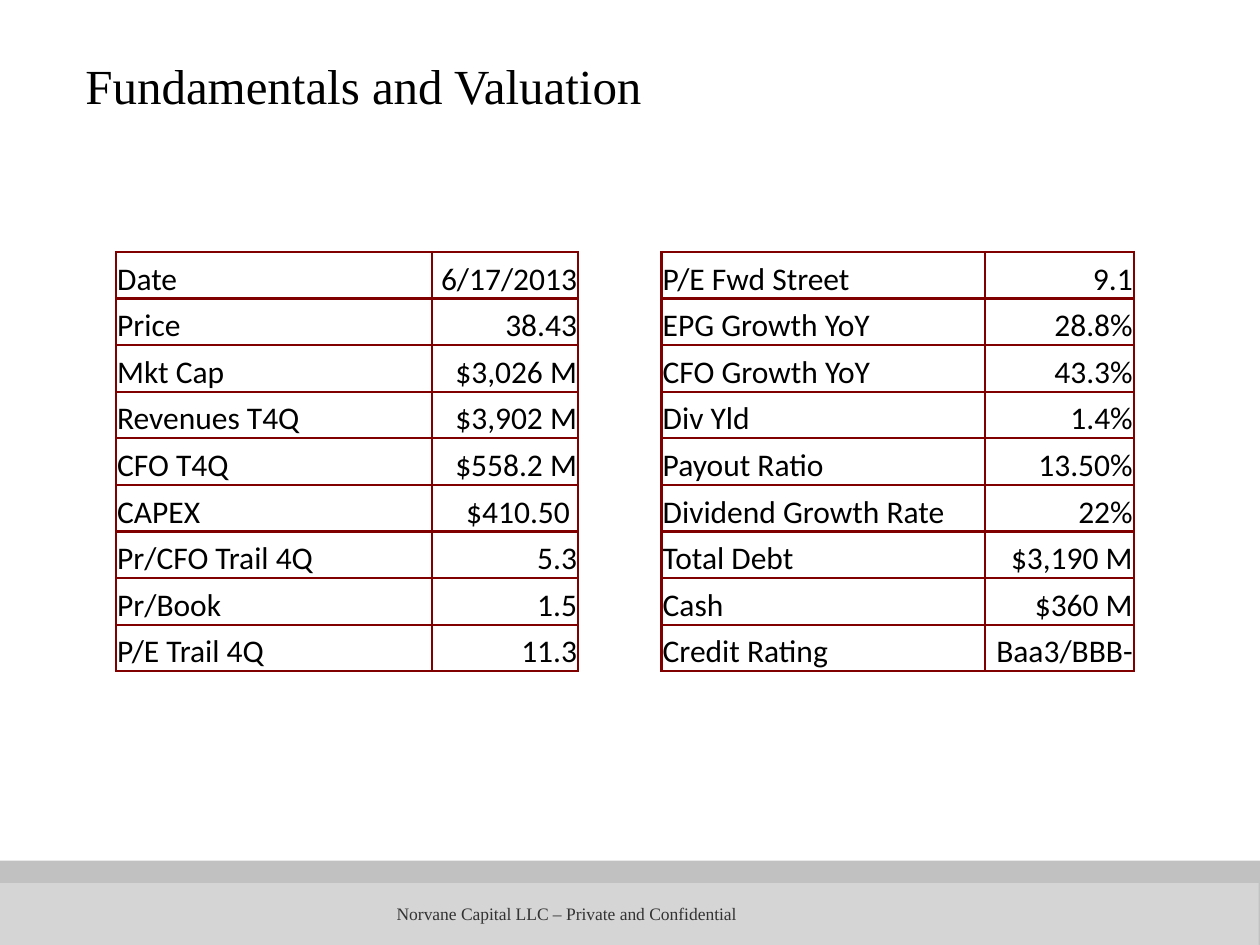
from lxml import etree
from pptx import Presentation
from pptx.dml.color import RGBColor
from pptx.enum import shapes, text
from pptx.oxml import ns
from pptx.util import Inches, Pt

ROW_HEIGHT = 0.37
BORDER_COLOR = "800000"


def color(value):
    return RGBColor.from_string(value)


def style(paragraph, name, size, value):
    font = paragraph.font
    font.name, font.size = name, Pt(size)
    font.color.rgb = color(value)


presentation = Presentation()
presentation.slide_width, presentation.slide_height = Inches(10), Inches(7.5)
slide = presentation.slides.add_slide(presentation.slide_layouts[6])

# Translucent footer bands
for left, top, height, fill in [(0, 6.83, 0.67, "858585"), (-0.01, 7.01, 0.5, "EAEAEA")]:
    band = slide.shapes.add_shape(
        shapes.MSO_SHAPE.RECTANGLE, Inches(left), Inches(top), Inches(10), Inches(height))
    band.shadow.inherit = False
    band.line.fill.background()
    band.fill.solid()
    band.fill.fore_color.rgb = color(fill)
    fill_color = band.fill._xPr.find(".//" + ns.qn("a:srgbClr"))
    etree.SubElement(fill_color, ns.qn("a:alpha"), val="50000")

# Footer and title
for words, left, top, width, height, margin_top, size, value in [
    ("Norvane Capital LLC – Private and Confidential", 3.05, 7.12, 3, 0.27, 0.05, 10, "333333"),
    ("Fundamentals and Valuation", 0.58, 0.33, 8.34, 1, 0.11, 28, "000000"),
]:
    box = slide.shapes.add_textbox(Inches(left), Inches(top), Inches(width), Inches(height))
    box.text_frame.word_wrap = True
    box.text_frame.margin_top = Inches(margin_top)
    box.text_frame.text = words
    style(box.text_frame.paragraphs[0], "Times New Roman", size, value)

# Two tables of figures: left edge, column widths, rows
tables = [
    (0.92, (2.51, 1.16), [
        ("Date", "6/17/2013"),
        ("Price", "38.43"),
        ("Mkt Cap", "$3,026 M"),
        ("Revenues T4Q", "$3,902 M"),
        ("CFO T4Q", "$558.2 M"),
        ("CAPEX", "$410.50 "),
        ("Pr/CFO Trail 4Q", "5.3"),
        ("Pr/Book", "1.5"),
        ("P/E Trail 4Q", "11.3"),
    ]),
    (5.25, (2.57, 1.18), [
        ("P/E Fwd Street", "9.1"),
        ("EPG Growth YoY", "28.8%"),
        ("CFO Growth YoY", "43.3%"),
        ("Div Yld", "1.4%"),
        ("Payout Ratio", "13.50%"),
        ("Dividend Growth Rate", "22%"),
        ("Total Debt", "$3,190 M"),
        ("Cash", "$360 M"),
        ("Credit Rating", "Baa3/BBB-"),
    ]),
]
alignments = (text.PP_ALIGN.LEFT, text.PP_ALIGN.RIGHT)

for left, widths, rows in tables:
    table = slide.shapes.add_table(
        len(rows), len(widths), Inches(left), Inches(2),
        Inches(sum(widths)), Inches(ROW_HEIGHT * len(rows))).table
    table.first_row = table.horz_banding = False
    for column, width in zip(table.columns, widths):
        column.width = Inches(width)
    for row_index, values in enumerate(rows):
        table.rows[row_index].height = Inches(ROW_HEIGHT)
        for column_index, value in enumerate(values):
            cell = table.cell(row_index, column_index)
            cell.text = value
            cell.vertical_anchor = text.MSO_ANCHOR.BOTTOM
            cell.margin_left = cell.margin_right = cell.margin_top = Inches(0.01)
            cell.margin_bottom = 0
            paragraph = cell.text_frame.paragraphs[0]
            paragraph.alignment = alignments[column_index]
            style(paragraph, "Calibri", 18, "000000")
            properties = cell._tc.get_or_add_tcPr()
            for side in ("lnL", "lnR", "lnT", "lnB"):
                border = etree.SubElement(properties, ns.qn("a:" + side), w=str(Pt(1.5)))
                solid = etree.SubElement(border, ns.qn("a:solidFill"))
                etree.SubElement(solid, ns.qn("a:srgbClr"), val=BORDER_COLOR)
            cell.fill.background()

presentation.save("out.pptx")
